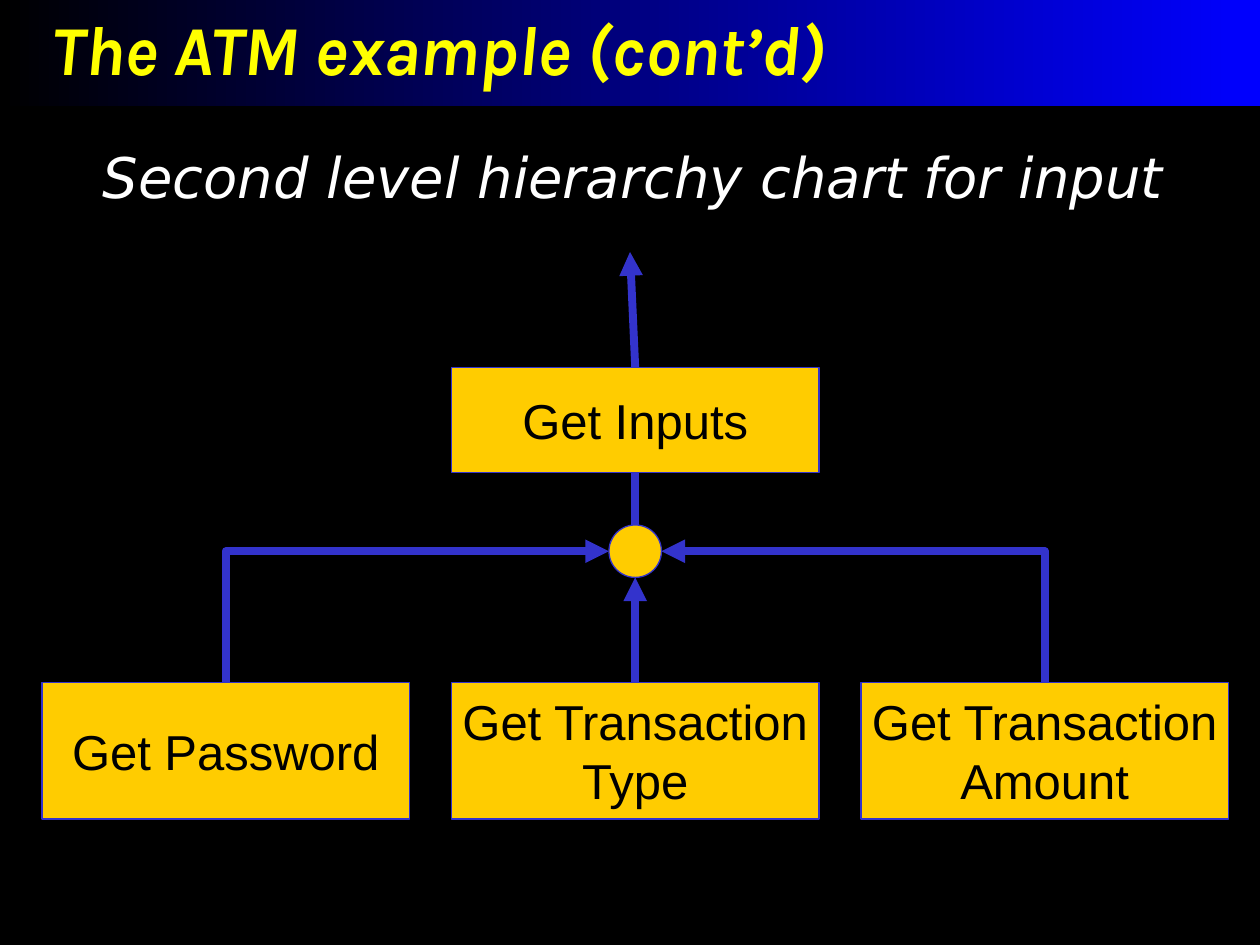
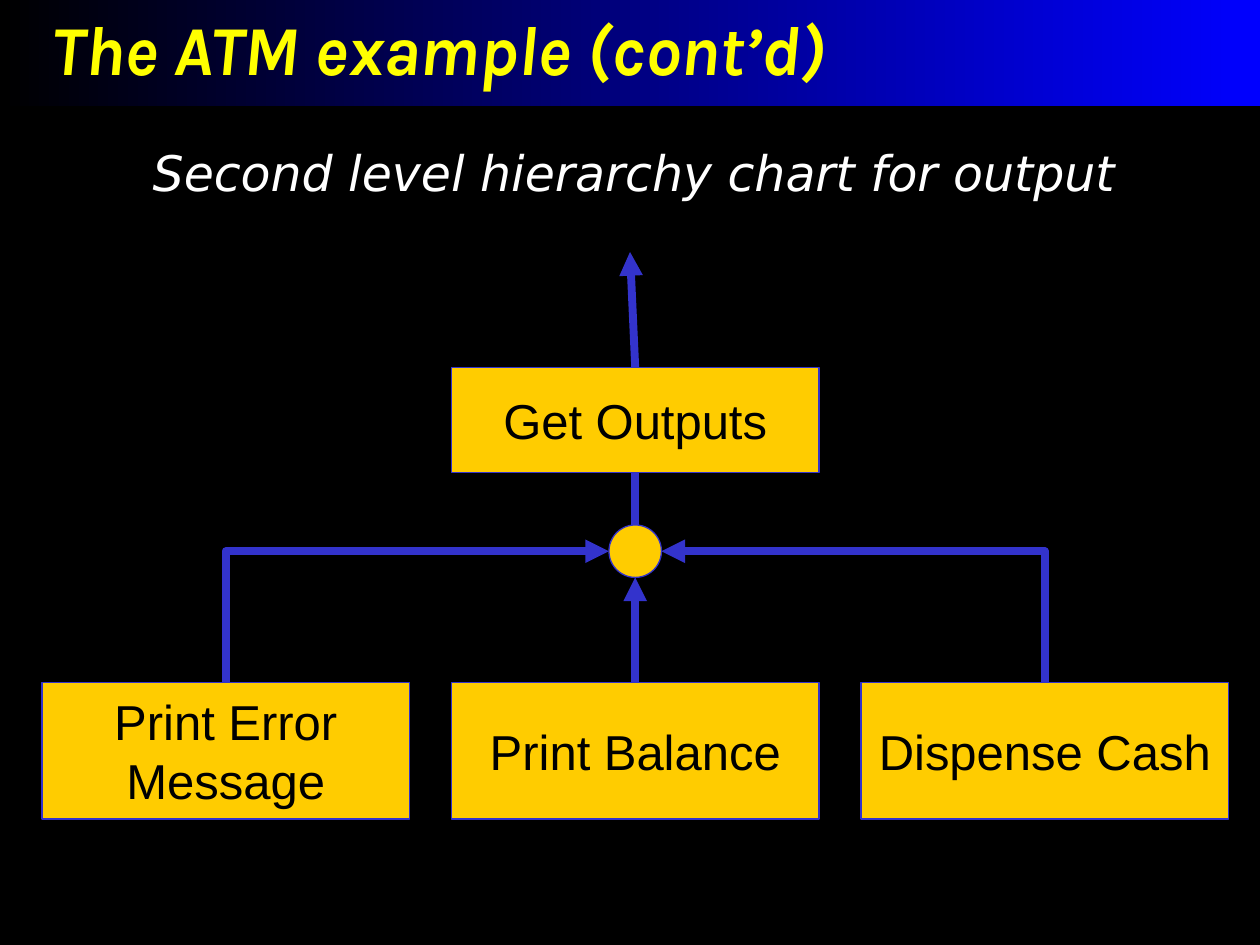
from lxml import etree
from pptx import Presentation
from pptx.dml.color import RGBColor as RGB
from pptx.enum.shapes import MSO_CONNECTOR as LINK, MSO_SHAPE as SHAPE
from pptx.enum.text import MSO_ANCHOR as ANCHOR, PP_ALIGN as ALIGN
from pptx.oxml.ns import qn
from pptx.util import Inches, Pt

COLORS = {"back": "000000", "band_end": "0000FF", "title": "FFFF00",
          "subtitle": "FFFFFF", "box": "FFCC00", "line": "3333CC", "label": "000000"}

# Grid: 120 columns by 90 rows on a 10 x 7.5 inch slide
COLS, ROWS = 120, 90
WIDTH, HEIGHT = Inches(10), Inches(7.5)
UNIT = WIDTH // COLS

FONTS = {
    "title": {"name": "Karla", "size": Pt(40), "bold": True, "italic": True},
    "subtitle": {"name": "DejaVu Sans", "italic": True},
    "label": {"name": "Arial", "size": Pt(28)},
}
FRAMES = {
    "title": {"word_wrap": True, "margin_left": Inches(0.41), "margin_right": Inches(0.14),
              "margin_top": Inches(0.13), "margin_bottom": Inches(0.13),
              "vertical_anchor": ANCHOR.TOP},
    "subtitle": {"word_wrap": True, "margin_left": Inches(0.24)},
    "label": {"word_wrap": False, "vertical_anchor": ANCHOR.MIDDLE},
}

TITLE = "The ATM example (cont’d)"
CHARTS = [
    {"subtitle": "Second level hierarchy chart for input", "size": 32,
     "parent": "Get Inputs",
     "children": ["Get Password", "Get Transaction\nType", "Get Transaction\nAmount"]},
    {"subtitle": "Second level hierarchy chart for output", "size": 28,
     "parent": "Get Outputs",
     "children": ["Print Error\nMessage", "Print Balance", "Dispense Cash"]},
]


def rgb(key):
    return RGB.from_string(COLORS[key])


def grid(*cells):
    return [round(c * UNIT) for c in cells]


def set_all(target, values):
    for name, value in values.items():
        setattr(target, name, value)


def write(sp, text, style, align=ALIGN.LEFT, **extra):
    tf = sp.text_frame
    set_all(tf, FRAMES[style])
    tf.text = text
    for p in tf.paragraphs:
        p.alignment = align
        for r in p.runs:
            set_all(r.font, {**FONTS[style], **extra})
            r.font.color.rgb = rgb(style)


def add_node(s, kind, box):
    sp = s.shapes.add_shape(kind, *grid(*box))
    sp.shadow.inherit = False
    sp.fill.solid()
    sp.fill.fore_color.rgb = rgb("box")
    sp.line.color.rgb = rgb("line")
    sp.line.width = Pt(0.75)
    return sp


def add_link(s, start, end, kind=LINK.STRAIGHT, arrow=True):
    """Draw a link whose arrowhead, if any, sits at its end."""
    link = s.shapes.add_connector(kind, *grid(*start, *end))
    link.line.color.rgb = rgb("line")
    link.line.width = Pt(4.5)
    props = link._element.spPr
    if arrow:
        # Bent links start at the hub, so their head is at the start
        tag = "a:headEnd" if kind == LINK.ELBOW else "a:tailEnd"
        etree.SubElement(link.line._get_or_add_ln(), qn(tag), type="triangle")
    if kind == LINK.ELBOW:
        props.find(qn("a:prstGeom")).set("prst", "bentConnector2")
    etree.SubElement(props, qn("a:effectLst"))
    return link


def title_band(s, box):
    sp = s.shapes.add_shape(SHAPE.RECTANGLE, *grid(*box))
    sp.shadow.inherit = False
    sp.line.fill.background()
    sp.fill.gradient()
    sp.fill.gradient_angle = 0
    for stop, key in zip(sp.fill.gradient_stops, ("back", "band_end")):
        stop.color.rgb = rgb(key)
    write(sp, TITLE, "title")


def subtitle_line(s, box, text, size):
    sp = s.shapes.add_textbox(*grid(*box))
    write(sp, text, "subtitle", ALIGN.CENTER, size=Pt(size))


def hierarchy(s, box, parent, children):
    x, y, w, h = box
    node_w, gap, parent_h, child_h, hub = 35, 4, 10, 13, 5
    parent_y, hub_y, child_y = y + 11, y + 26, y + h - child_h
    mid_x, hub_mid = x + w / 2, hub_y + hub / 2

    # Parent, children and the hub between them
    top = add_node(s, SHAPE.RECTANGLE, (mid_x - node_w / 2, parent_y, node_w, parent_h))
    write(top, parent, "label", ALIGN.CENTER)
    nodes = []
    for i, text in enumerate(children):
        sp = add_node(s, SHAPE.RECTANGLE, (x + i * (node_w + gap), child_y, node_w, child_h))
        write(sp, text, "label", ALIGN.CENTER)
        nodes.append(sp)
    add_node(s, SHAPE.FLOWCHART_CONNECTOR, (mid_x - hub / 2, hub_y, hub, hub))

    # Outer children bend into the sides of the hub
    for side in (-1, 1):
        add_link(s, (mid_x + side * hub / 2, hub_mid),
                 (mid_x + side * (node_w + gap), child_y), LINK.ELBOW)

    # Middle child to hub, hub to parent, parent upwards
    add_link(s, (mid_x, child_y), (mid_x, hub_y + hub)).begin_connect(nodes[1], 0)
    add_link(s, (mid_x, parent_y + parent_h), (mid_x, hub_y),
             arrow=False).begin_connect(top, 2)
    add_link(s, (mid_x, parent_y), (COLS / 2, y)).begin_connect(top, 0)


def chart_slide(prs, chart):
    s = prs.slides.add_slide(prs.slide_layouts[6])
    s.background.fill.solid()
    s.background.fill.fore_color.rgb = rgb("back")
    title_band(s, (0, -1, COLS, 11.15))
    subtitle_line(s, (5, 13, 109, 7.5), chart["subtitle"], chart["size"])
    hierarchy(s, (4, 24, 113, 54), chart["parent"], chart["children"])


def main():
    prs = Presentation()
    prs.slide_width, prs.slide_height = WIDTH, HEIGHT
    for chart in CHARTS:
        chart_slide(prs, chart)
    prs.save("out.pptx")


if __name__ == "__main__":
    main()
